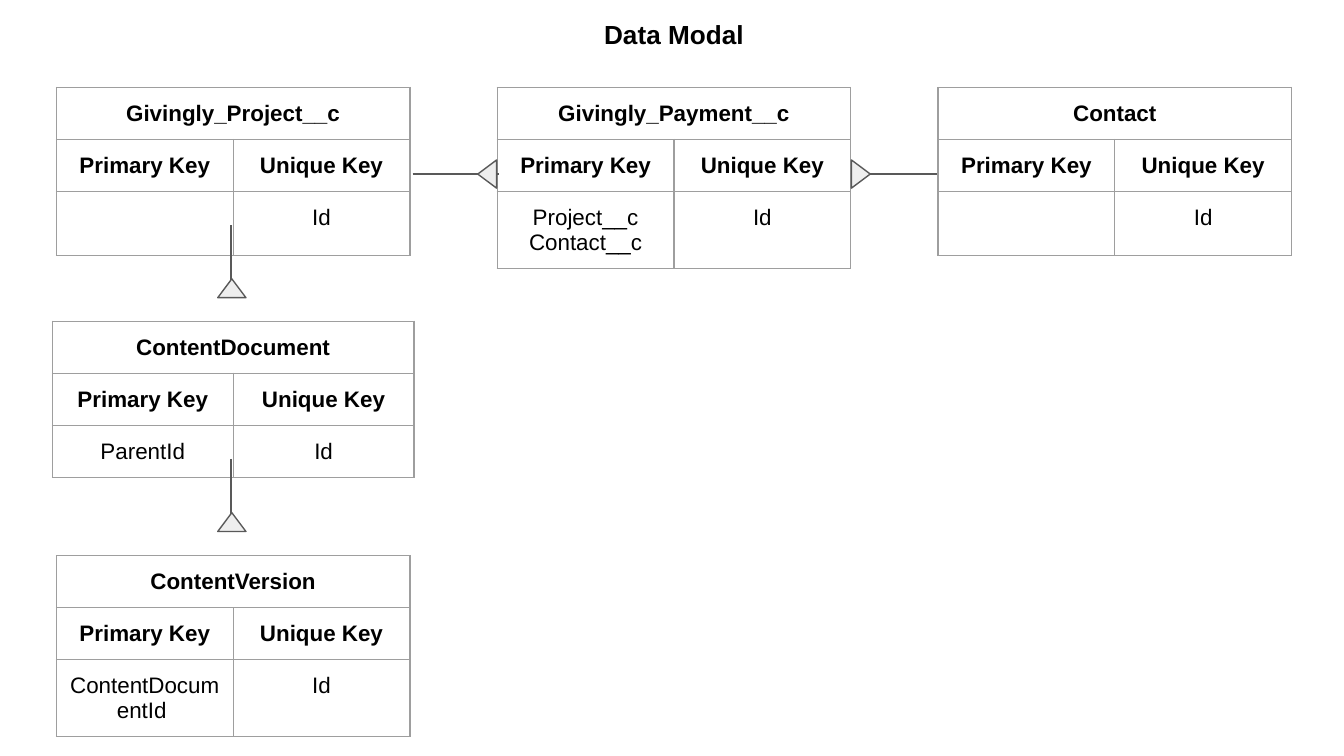
from dataclasses import dataclass

from lxml.etree import SubElement
from pptx import Presentation
from pptx.dml.color import RGBColor
from pptx.enum.shapes import MSO_CONNECTOR as Conn, MSO_SHAPE as Shape
from pptx.enum.text import MSO_ANCHOR as Anchor, PP_ALIGN as Align
from pptx.oxml import parse_xml
from pptx.oxml.ns import nsdecls, qn
from pptx.util import Pt

PX = 4572  # EMU in one px, 200 px to the inch


@dataclass(frozen=True)
class Theme:
    font: str = "Arial"
    title_size: int = 14
    cell_size: int = 12
    line_width: float = 0.75
    text: str = "000000"
    border: str = "9E9E9E"
    line: str = "595959"
    marker: str = "EEEEEE"


@dataclass(frozen=True)
class Entity:
    name: str
    primary_keys: str
    x: int
    y: int
    col_width: int
    keys_height: int


@dataclass(frozen=True)
class Relation:
    """A line from (x1, y1) to (x2, y2) with a triangle centred on (mx, my)."""
    x1: int
    y1: int
    x2: int
    y2: int
    mx: int
    my: int
    rotation: int


THEME = Theme()
ROW_H = 77
MARGIN = 20
MARKER_W, MARKER_H = 42, 28

ENTITIES = [
    Entity("Givingly_Project__c", "", 84, 130, 263, 96),
    Entity("Contact", "", 1396, 130, 263, 96),
    Entity("Givingly_Payment__c", "Project__c\nContact__c", 740, 130, 263, 114),
    Entity("ContentDocument", "ParentId", 78, 478, 269, 77),
    Entity("ContentVersion", "ContentDocumentId ", 84, 827, 263, 114),
]
RELATIONS = [
    Relation(614, 259, 742, 259, 725, 259, 270),
    Relation(1266, 259, 1394, 259, 1281, 259, 90),
    Relation(344, 335, 344, 443, 345, 429, 0),
    Relation(344, 683, 344, 791, 345, 777, 0),
]


def write(tf, text: str, size: int, bold: bool) -> None:
    tf.text = text
    for p in tf.paragraphs:
        p.alignment = Align.CENTER
        for r in p.runs:
            r.font.name = THEME.font
            r.font.size = Pt(size)
            r.font.bold = bold
            r.font.color.rgb = RGBColor.from_string(THEME.text)


def set_borders(cell) -> None:
    tc_pr = cell._tc.get_or_add_tcPr()
    for i, side in enumerate(("lnL", "lnR", "lnT", "lnB")):
        tc_pr.insert(i, parse_xml(
            f'<a:{side} {nsdecls("a")} w="{Pt(THEME.line_width)}"><a:solidFill>'
            f'<a:srgbClr val="{THEME.border}"/></a:solidFill></a:{side}>'))


def add_entity(s, e: Entity) -> None:
    heights = (ROW_H, ROW_H, e.keys_height)
    frame = s.shapes.add_table(3, 2, e.x * PX, e.y * PX,
                               2 * e.col_width * PX, sum(heights) * PX)
    table = frame.table
    table.first_row = table.horz_banding = False
    for col in table.columns:
        col.width = e.col_width * PX
    for row, height in zip(table.rows, heights):
        row.height = height * PX
    table.cell(0, 0).merge(table.cell(0, 1))

    rows = ((e.name, ""), ("Primary Key", "Unique Key"), (e.primary_keys, "Id"))
    for i, texts in enumerate(rows):
        for j, text in enumerate(texts):
            cell = table.cell(i, j)
            cell.fill.background()
            set_borders(cell)
            if text:
                cell.margin_left = cell.margin_right = MARGIN * PX
                cell.margin_top = cell.margin_bottom = MARGIN * PX
                write(cell.text_frame, text, THEME.cell_size, bold=i < 2)


def style_line(line) -> None:
    line.color.rgb = RGBColor.from_string(THEME.line)
    line.width = Pt(THEME.line_width)


def add_line(s, rel: Relation) -> None:
    line = s.shapes.add_connector(Conn.STRAIGHT, rel.x1 * PX, rel.y1 * PX,
                                  rel.x2 * PX, rel.y2 * PX)
    style_line(line.line)
    SubElement(line._element.spPr, qn("a:effectLst"))


def add_marker(s, rel: Relation) -> None:
    sp = s.shapes.add_shape(Shape.FLOWCHART_EXTRACT,
                            (rel.mx - MARKER_W // 2) * PX,
                            (rel.my - MARKER_H // 2) * PX,
                            MARKER_W * PX, MARKER_H * PX)
    sp.rotation = rel.rotation
    sp.shadow.inherit = False
    sp.fill.solid()
    sp.fill.fore_color.rgb = RGBColor.from_string(THEME.marker)
    style_line(sp.line)


def set_title(s, text: str) -> None:
    title = s.shapes.title
    title.left, title.top, title.width, title.height = 675 * PX, 0, 656 * PX, 88 * PX
    tf = title.text_frame
    tf.margin_left = tf.margin_right = tf.margin_top = tf.margin_bottom = MARGIN * PX
    tf.vertical_anchor = Anchor.TOP
    tf.word_wrap = True
    write(tf, text, THEME.title_size, bold=True)
    tf.paragraphs[0].line_spacing = 1.15


def main() -> None:
    prs = Presentation()
    prs.slide_width, prs.slide_height = 2000 * PX, 1125 * PX
    s = prs.slides.add_slide(prs.slide_layouts[5])
    set_title(s, "Data Modal")
    for entity in ENTITIES:
        add_entity(s, entity)
    for relation in RELATIONS:
        add_line(s, relation)
    for relation in RELATIONS:
        add_marker(s, relation)
    prs.save("out.pptx")


if __name__ == "__main__":
    main()
